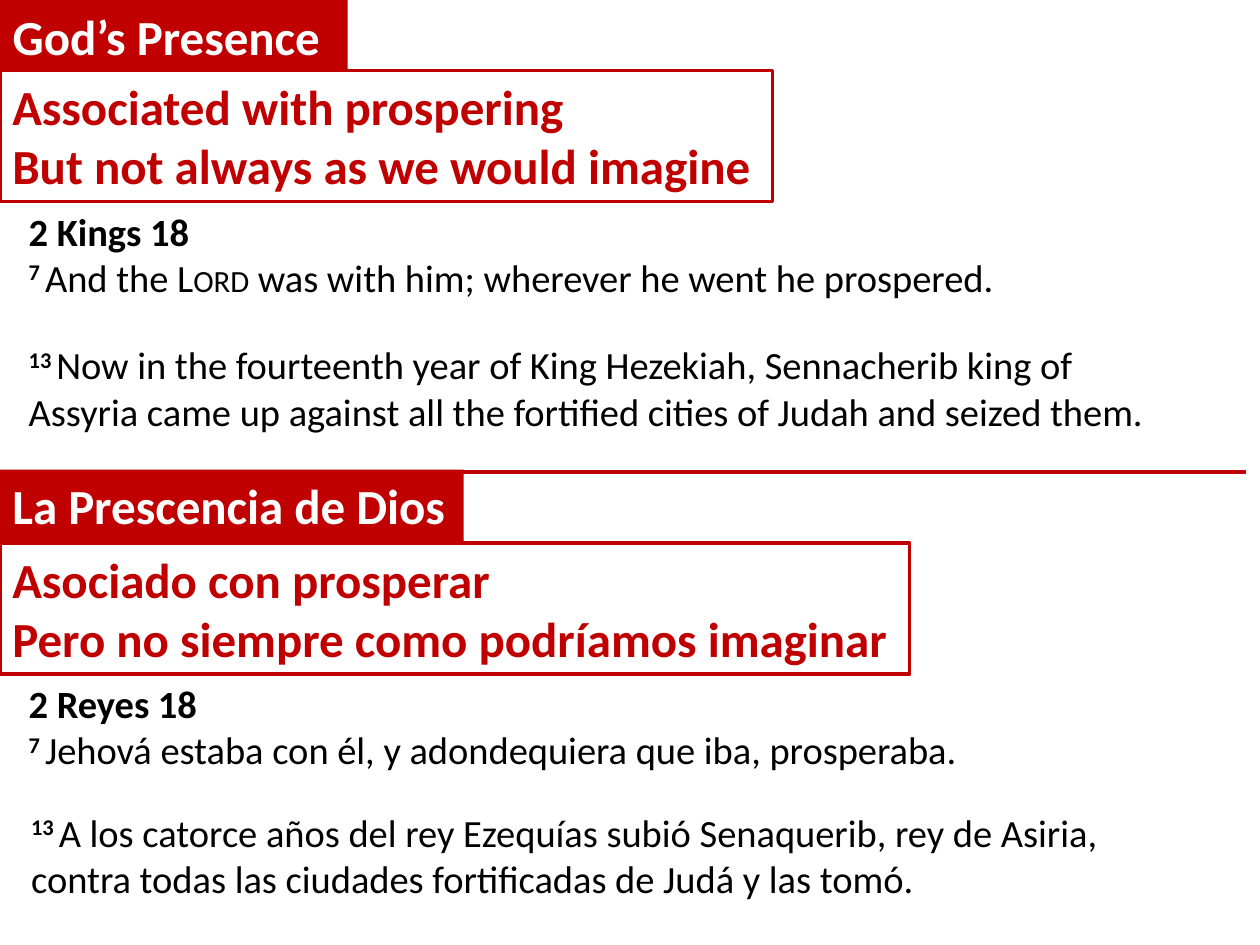
"""Build a bilingual slide on God's presence in 2 Kings 18."""
from lxml import etree
from pptx import Presentation
from pptx import util as u
from pptx.dml.color import RGBColor
from pptx.enum import shapes, text
from pptx.oxml.ns import qn

RED = RGBColor(0xC0, 0x00, 0x00)
WHITE = RGBColor(0xFF, 0xFF, 0xFF)
BLACK = RGBColor(0x00, 0x00, 0x00)
FONT = "Calibri"
HEADING_SIZE = 28
VERSE_SIZE = 22


def place(shape, left, top, width, height):
    """Position a shape with lengths in centimetres."""
    shape.left, shape.top = u.Cm(left), u.Cm(top)
    shape.width, shape.height = u.Cm(width), u.Cm(height)


def format_run(run, size, color, bold=True):
    """Apply the shared font to a run."""
    run.font.name = FONT
    run.font.size = u.Pt(size)
    run.font.bold = bold
    run.font.color.rgb = color


def fit_frame(shape, wrap):
    """Anchor text at the top and let the shape grow with it."""
    frame = shape.text_frame
    frame.word_wrap = wrap
    frame.auto_size = text.MSO_AUTO_SIZE.SHAPE_TO_FIT_TEXT
    frame.vertical_anchor = text.MSO_ANCHOR.TOP
    return frame


def fill_heading(shape, content, color):
    """Write bold left-aligned heading lines into a shape."""
    frame = fit_frame(shape, False)
    frame.text = content
    for paragraph in frame.paragraphs:
        paragraph.alignment = text.PP_ALIGN.LEFT
        for run in paragraph.runs:
            format_run(run, HEADING_SIZE, color)


def fill_banner(shape, content, top, width):
    """Turn a shape into a solid red banner."""
    place(shape, 0, top, width, 1.45)
    shape.fill.solid()
    shape.fill.fore_color.rgb = RED
    shape.line.fill.background()
    fill_heading(shape, content, WHITE)


def add_rectangle(slide):
    """Add a plain rectangle without shadow."""
    shape = slide.shapes.add_shape(shapes.MSO_SHAPE.RECTANGLE, 0, 0, 0, 0)
    shape.shadow.inherit = False
    return shape


def add_point(slide, content, top, width):
    """Add a white box with a red outline and red text."""
    shape = add_rectangle(slide)
    place(shape, 0, top, width, 2.64)
    shape.fill.solid()
    shape.fill.fore_color.rgb = WHITE
    shape.line.color.rgb = RED
    shape.line.width = u.Pt(2)
    fill_heading(shape, content, RED)


def add_verse(slide, box, number, parts, reference=None):
    """Add a verse with a raised number; each part pairs wording with its caps."""
    shape = slide.shapes.add_textbox(0, 0, 0, 0)
    place(shape, *box)
    frame = fit_frame(shape, True)
    paragraph = frame.paragraphs[0]
    if reference:
        paragraph.text = reference
        format_run(paragraph.runs[0], VERSE_SIZE, BLACK)
        paragraph = frame.add_paragraph()
    run = paragraph.add_run()
    run.text = f"{number} "
    format_run(run, VERSE_SIZE, BLACK)
    run._r.get_or_add_rPr().set("baseline", "30000")
    for wording, caps in parts:
        run = paragraph.add_run()
        run.text = wording
        format_run(run, VERSE_SIZE, BLACK, bold=False)
        if caps:
            run._r.get_or_add_rPr().set("cap", caps)


def add_divider(slide, left, right, top):
    """Add the red line between the two languages."""
    line = slide.shapes.add_connector(
        shapes.MSO_CONNECTOR.STRAIGHT, u.Cm(left), u.Cm(top), u.Cm(right), u.Cm(top))
    line.line.color.rgb = RED
    line.line.width = u.Pt(2)
    etree.SubElement(line._element.spPr, qn("a:effectLst"))


def main():
    """Create the slide and save it."""
    presentation = Presentation()
    presentation.slide_width, presentation.slide_height = u.Cm(25.4), u.Cm(19.05)
    slide = presentation.slides.add_slide(presentation.slide_layouts[5])

    fill_banner(slide.shapes.title, "God’s Presence", 0, 7.01)
    add_divider(slide, 0.36, 25.12, 9.52)
    add_point(slide, "Associated with prospering\nBut not always as we would imagine", 1.42, 15.57)
    add_verse(slide, (0.33, 4.06, 24.74, 2.13), 7, [
        ("And the ", None),
        ("Lord", "small"),
        (" was with him; wherever he went he prospered.", None),
    ], "2 Kings 18")
    add_verse(slide, (0.33, 6.76, 23.04, 2.13), 13, [
        ("Now in the fourteenth year of King Hezekiah, Sennacherib king of Assyria "
         "came up against all the fortified cities of Judah and seized them.", None),
    ])

    fill_banner(add_rectangle(slide), "La Prescencia de Dios", 9.47, 9.35)
    add_point(slide, "Asociado con prosperar\nPero no siempre como podríamos imaginar", 10.95, 18.34)
    add_verse(slide, (0.33, 13.59, 24.74, 2.13), 7, [
        ("Jehová estaba con él, y adondequiera que iba, prosperaba.", None),
    ], "2 Reyes 18")
    add_verse(slide, (0.38, 16.18, 22.45, 2.13), 13, [
        ("A los catorce años del rey Ezequías subió Senaquerib, rey de Asiria, "
         "contra todas las ciudades fortificadas de Judá y las tomó.", None),
    ])
    presentation.save("out.pptx")


if __name__ == "__main__":
    main()
